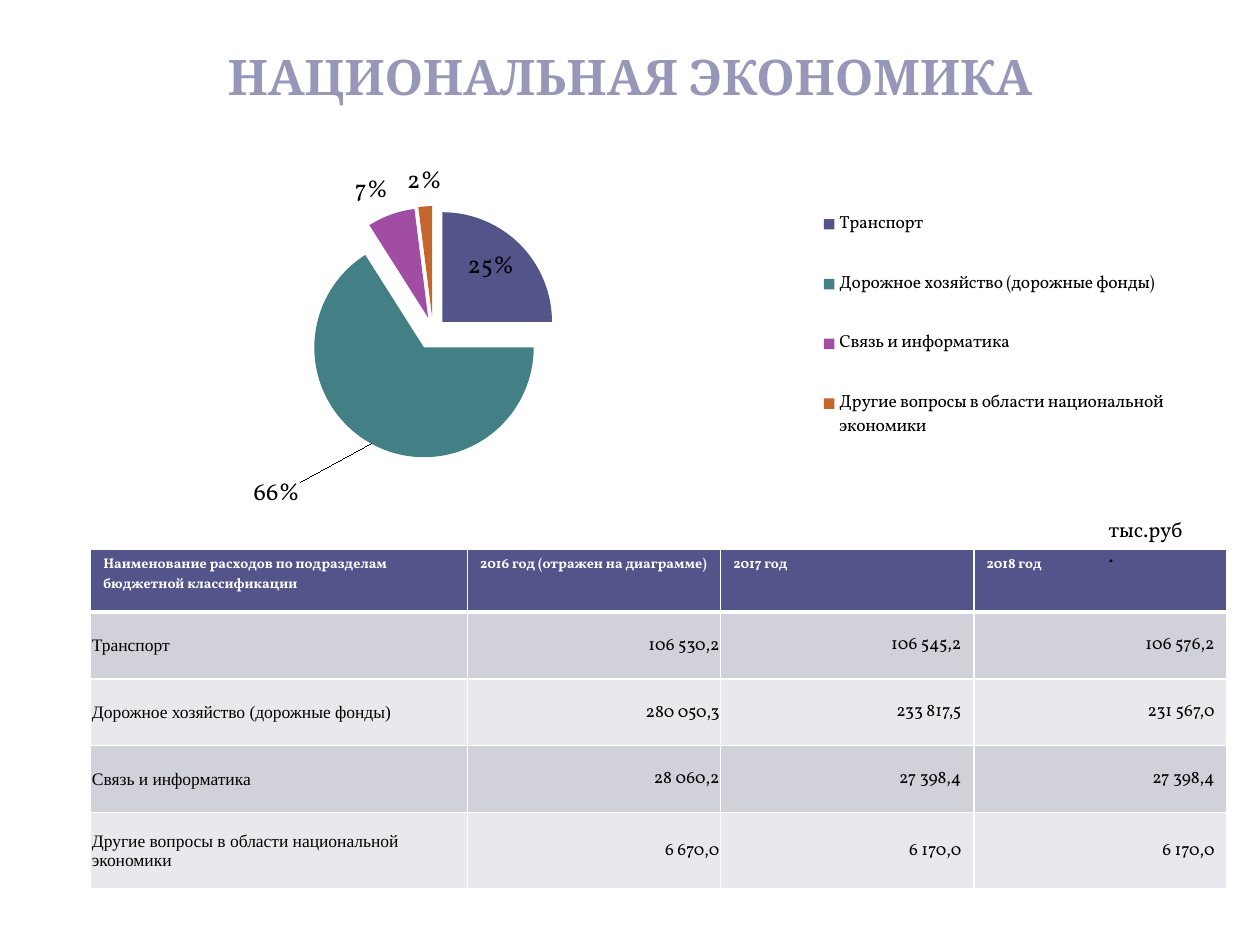
from lxml import etree
from pptx import Presentation
from pptx.chart.data import CategoryChartData
from pptx.dml.color import RGBColor
from pptx.enum.chart import XL_CHART_TYPE, XL_LABEL_POSITION, XL_LEGEND_POSITION
from pptx.enum.text import MSO_ANCHOR, PP_ALIGN
from pptx.oxml import parse_xml
from pptx.oxml.ns import nsdecls, qn
from pptx.util import Inches, Pt

PIE = XL_CHART_TYPE.PIE
LEGEND_RIGHT = XL_LEGEND_POSITION.RIGHT
INSIDE, OUTSIDE = XL_LABEL_POSITION.INSIDE_END, XL_LABEL_POSITION.OUTSIDE_END
LEFT, CENTER, RIGHT = PP_ALIGN.LEFT, PP_ALIGN.CENTER, PP_ALIGN.RIGHT
TOP, MIDDLE = MSO_ANCHOR.TOP, MSO_ANCHOR.MIDDLE

WIDTH, HEIGHT = Inches(10), Inches(7.5)
THEME = {
    "title": {"name": "Cambria", "size": Pt(28), "bold": True, "color": "9798B9"},
    "unit": {"name": "Vollkorn", "size": Pt(12), "bold": False, "color": "000000"},
    "label": {"name": "Vollkorn", "size": Pt(14), "bold": False, "color": "000000"},
    "legend": {"name": "Vollkorn", "size": Pt(10), "bold": False, "color": "000000"},
    "header": {"name": "Vollkorn", "size": Pt(8), "bold": True, "color": "FFFFFF"},
    "row name": {"name": "Times New Roman", "size": Pt(10), "bold": False, "color": "000000"},
    "amount": {"name": "Vollkorn", "size": Pt(10), "bold": False, "color": "000000"},
    "slices": ["53548A", "438086", "A04DA3", "C4652D"],
    "header fill": "53548A",
    "bands": ["D1D1DA", "E9E9ED"],
    "border": "FFFFFF",
}

HEADINGS = ["Наименование расходов по подразделам бюджетной классификации",
            "2016 год (отражен на диаграмме)", "2017 год", "2018 год"]
EXPENSES = [
    ["Транспорт", "106 530,2", "106 545,2", "106 576,2"],
    ["Дорожное хозяйство (дорожные фонды)", "280 050,3", "233 817,5", "231 567,0"],
    ["Связь и информатика", "28 060,2", "27 398,4", "27 398,4"],
    ["Другие вопросы в области национальной экономики", "6 670,0", "6 170,0", "6 170,0"],
]
SHARES = [25, 66, 7, 2]
EXPLOSIONS = [12, 17, 13, 14]


def style_font(font, style):
    for attribute, value in THEME[style].items():
        if attribute == "color":
            font.color.rgb = RGBColor.from_string(value)
        else:
            setattr(font, attribute, value)


def manual_layout(**values):
    """Return a c:layout element; every value is a share of the chart's size."""
    layout = etree.fromstring(f"<c:layout {nsdecls('c')}><c:manualLayout/></c:layout>")
    for name, value in values.items():
        etree.SubElement(layout[0], qn(f"c:{name}")).set("val", str(value))
    return layout


presentation = Presentation()
presentation.slide_width, presentation.slide_height = WIDTH, HEIGHT
slide = presentation.slides.add_slide(presentation.slide_layouts[6])

# Chart
chart_data = CategoryChartData()
chart_data.categories = [row[0] for row in EXPENSES]
chart_data.add_series("Series 1", SHARES)
chart = slide.shapes.add_chart(
    PIE, int(WIDTH * 0.05), int(HEIGHT * 0.164), int(WIDTH * 0.89), int(HEIGHT * 0.377), chart_data
).chart
chart.has_title = False
style_font(chart.font, "label")
chart.has_legend = True
legend = chart.legend
legend.position = LEGEND_RIGHT
legend.include_in_layout = False
style_font(legend.font, "legend")
legend_position = legend._element.find(qn("c:legendPos"))
legend_position.addnext(manual_layout(xMode="edge", yMode="edge", x=0.67, y=0.06, w=0.32, h=0.84))

plot = chart.plots[0]
plot.vary_by_categories = True
plot_area = plot._element.getparent()
for old_layout in plot_area.findall(qn("c:layout")):
    plot_area.remove(old_layout)
plot_area.insert(0, manual_layout(layoutTarget="inner", xMode="edge", yMode="edge",
                                  x=0.06, y=0.11, w=0.54, h=0.77))

plot.has_data_labels = True
labels = plot.data_labels
for attribute, value in {"show_percentage": True, "show_value": False, "number_format": "0%",
                         "number_format_is_linked": False, "position": OUTSIDE}.items():
    setattr(labels, attribute, value)
style_font(labels.font, "label")

series = plot.series[0]
for index, (color, explosion) in enumerate(zip(THEME["slices"], EXPLOSIONS)):
    point = series.points[index]
    point.format.fill.solid()
    point.format.fill.fore_color.rgb = RGBColor.from_string(color)
    point.format.line.fill.background()
    slice_properties = point.format._element if hasattr(point.format, "_element") else None
    point_element = series._element.findall(qn("c:dPt"))[index]
    shape_properties = point_element.find(qn("c:spPr"))
    shape_properties.addprevious(
        parse_xml(f'<c:explosion {nsdecls("c")} val="{explosion}"/>'))
    label = point.data_label
    label.position = INSIDE if index == 0 else OUTSIDE
    style_font(label.font, "label")
    label_element = series._element.find(qn("c:dLbls")).findall(qn("c:dLbl"))[index]
    label_element.find(qn("c:showVal")).set("val", "0")
    label_element.find(qn("c:showPercent")).set("val", "1")
    if index == 1:
        label_element.find(qn("c:idx")).addnext(manual_layout(x=-0.06, y=0.09))
series_labels = series.data_labels
for attribute, value in {"show_percentage": True, "show_value": False, "number_format": "0%",
                         "number_format_is_linked": False}.items():
    setattr(series_labels, attribute, value)
series._element.find(qn("c:dPt")).addprevious(
    parse_xml(f'<c:explosion {nsdecls("c")} val="25"/>'))

# Table
column_widths = [2.99, 2.01, 2.01, 2.01]
row_heights = [0.5, 0.53, 0.53, 0.53, 0.61]
table = slide.shapes.add_table(
    len(row_heights), len(column_widths), int(WIDTH * 0.072), int(HEIGHT * 0.581),
    Inches(sum(column_widths)), Inches(sum(row_heights))
).table
for column, width in zip(table.columns, column_widths):
    column.width = Inches(width)
for row, height in zip(table.rows, row_heights):
    row.height = Inches(height)

for row_index, texts in enumerate([HEADINGS] + EXPENSES):
    is_header = row_index == 0
    fill = THEME["header fill"] if is_header else THEME["bands"][(row_index - 1) % 2]
    for column_index, text in enumerate(texts):
        cell = table.cell(row_index, column_index)
        cell.text = text
        cell.vertical_anchor = TOP if is_header else MIDDLE
        paragraph = cell.text_frame.paragraphs[0]
        paragraph.alignment = LEFT if is_header or column_index == 0 else RIGHT
        style = "header" if is_header else "amount" if column_index else "row name"
        style_font(paragraph.runs[0].font, style)
        if not is_header and column_index < 2:
            cell.margin_left = cell.margin_right = cell.margin_top = Inches(0.01)
            cell.margin_bottom = 0
        cell_properties = cell._tc.get_or_add_tcPr()
        for side in "LRTB":
            heavy = (is_header and side == "B") or (row_index == 1 and side == "T")
            cell_properties.append(parse_xml(
                f'<a:ln{side} {nsdecls("a")} w="{Pt(3 if heavy else 1)}"><a:solidFill>'
                f'<a:srgbClr val="{THEME["border"]}"/></a:solidFill></a:ln{side}>'))
        cell.fill.solid()
        cell.fill.fore_color.rgb = RGBColor.from_string(fill)

# Title and unit of measure
for text, style, alignment, left, top, width, height in [
    ("НАЦИОНАЛЬНАЯ ЭКОНОМИКА", "title", CENTER, 0.05, 0.04, 0.9, 0.08),
    ("тыс.руб.", "unit", LEFT, 0.87, 0.54, 0.08, 0.04),
]:
    text_frame = slide.shapes.add_textbox(
        int(WIDTH * left), int(HEIGHT * top), int(WIDTH * width), int(HEIGHT * height)).text_frame
    text_frame.word_wrap = style == "title"
    text_frame.vertical_anchor = MIDDLE if style == "title" else TOP
    paragraph = text_frame.paragraphs[0]
    paragraph.text = text
    paragraph.alignment = alignment
    style_font(paragraph.runs[0].font, style)

presentation.save("out.pptx")
